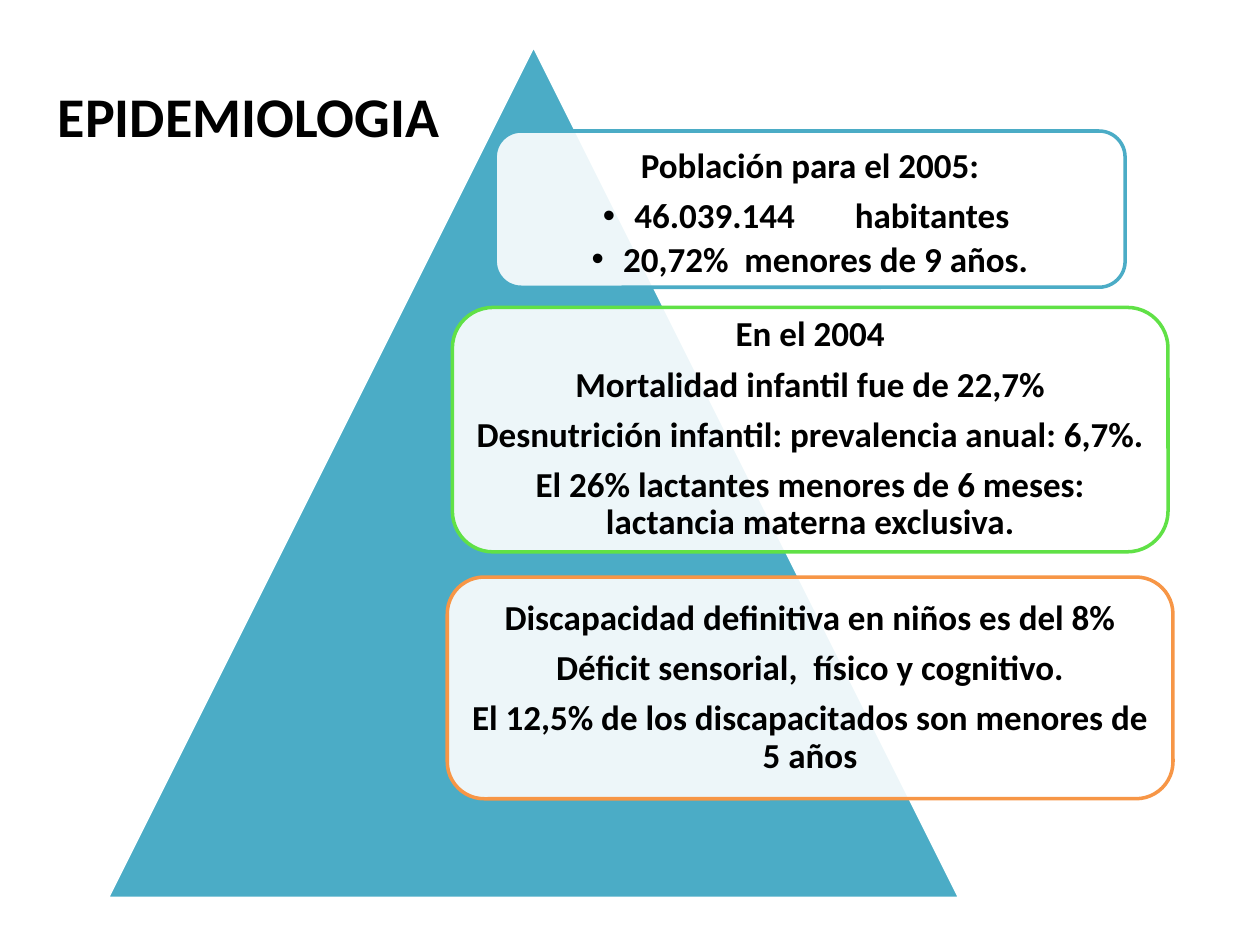
from dataclasses import dataclass

from lxml.etree import SubElement
from pptx import Presentation
from pptx.dml.color import RGBColor
from pptx.enum.shapes import MSO_SHAPE
from pptx.enum.text import MSO_ANCHOR, MSO_AUTO_SIZE, PP_ALIGN
from pptx.oxml.ns import qn
from pptx.util import Inches, Pt


@dataclass(frozen=True)
class Theme:
    font: str = "Calibri"
    ink: str = "000000"
    white: str = "FFFFFF"
    teal: str = "4BACC6"
    green: str = "60E146"
    orange: str = "F79646"
    title_size: int = 32
    body_size: int = 20
    line_width: int = 2
    card_opacity: int = 90
    card_inset: float = 0.08


def write_paragraph(paragraph, text, *, theme, size, line_spacing=None, after=0, bullet=False):
    paragraph.alignment = PP_ALIGN.CENTER
    paragraph.line_spacing = line_spacing
    paragraph.space_after = Pt(after)
    if bullet:
        paragraph.level = 1
        properties = paragraph._p.get_or_add_pPr()
        properties.set("marL", str(Inches(0.25)))
        properties.set("indent", str(Inches(-0.25)))
        SubElement(properties, qn("a:buFont"), typeface="Arial")
        SubElement(properties, qn("a:buChar"), char="•")
    run = paragraph.add_run()
    run.text = text
    run.font.name = theme.font
    run.font.size = Pt(size)
    run.font.bold = True
    run.font.color.rgb = RGBColor.from_string(theme.ink)


class SlideBuilder:
    def __init__(self, slide, theme):
        self.slide = slide
        self.theme = theme

    def outlined(self, preset, box, fill, line):
        shape = self.slide.shapes.add_shape(preset, *map(Inches, box))
        shape.shadow.inherit = False
        shape.fill.solid()
        shape.fill.fore_color.rgb = RGBColor.from_string(fill)
        shape.line.color.rgb = RGBColor.from_string(line)
        shape.line.width = Pt(self.theme.line_width)
        return shape

    def pyramid(self, box):
        self.outlined(MSO_SHAPE.ISOSCELES_TRIANGLE, box, self.theme.teal, self.theme.white)

    def card(self, box, line, facts, bullets=(), anchor=MSO_ANCHOR.MIDDLE):
        card = self.outlined(MSO_SHAPE.ROUNDED_RECTANGLE, box, self.theme.white, line)
        color = card.fill._xPr.find(qn("a:solidFill"))[0]
        SubElement(color, qn("a:alpha"), val=str(self.theme.card_opacity * 1000))
        frame = card.text_frame
        frame.word_wrap = True
        frame.vertical_anchor = anchor
        inset = Inches(self.theme.card_inset)
        frame.margin_left = frame.margin_right = inset
        frame.margin_top = frame.margin_bottom = inset
        for index, text in enumerate([*facts, *bullets]):
            paragraph = frame.add_paragraph() if index else frame.paragraphs[0]
            is_bullet = index >= len(facts)
            write_paragraph(paragraph, text, theme=self.theme, size=self.theme.body_size,
                            line_spacing=0.9, after=3 if is_bullet else 7, bullet=is_bullet)

    def title(self, box, text):
        frame = self.slide.shapes.add_textbox(*map(Inches, box)).text_frame
        frame.word_wrap = True
        frame.auto_size = MSO_AUTO_SIZE.SHAPE_TO_FIT_TEXT
        write_paragraph(frame.paragraphs[0], text, theme=self.theme, size=self.theme.title_size)


def main():
    presentation = Presentation()
    presentation.slide_width = Inches(10)
    presentation.slide_height = Inches(7.5)
    theme = Theme()
    builder = SlideBuilder(presentation.slides.add_slide(presentation.slide_layouts[6]), theme)

    # Pyramid behind the cards
    builder.pyramid((0.85, 0.36, 6.77, 6.77))

    # Population
    builder.card((3.93, 1.04, 5, 1.24), theme.teal,
                 ["Población para el 2005:"],
                 bullets=["46.039.144\thabitantes ", "20,72%  menores de 9 años."],
                 anchor=MSO_ANCHOR.TOP)

    # Mortality and nutrition
    builder.card((3.59, 2.44, 5.68, 1.94), theme.green, [
        "En el 2004",
        "Mortalidad infantil fue de 22,7%",
        "Desnutrición infantil: prevalencia anual: 6,7%.",
        "El 26% lactantes menores de 6 meses: lactancia materna exclusiva.",
    ])

    # Disability
    builder.card((3.55, 4.58, 5.76, 1.76), theme.orange, [
        "Discapacidad definitiva en niños es del 8%",
        "Déficit sensorial,  físico y cognitivo.",
        "El 12,5% de los discapacitados son menores de 5 años",
    ])

    # Title
    builder.title((0.28, 0.6, 3.39, 0.64), "EPIDEMIOLOGIA")

    presentation.save("out.pptx")


if __name__ == "__main__":
    main()
